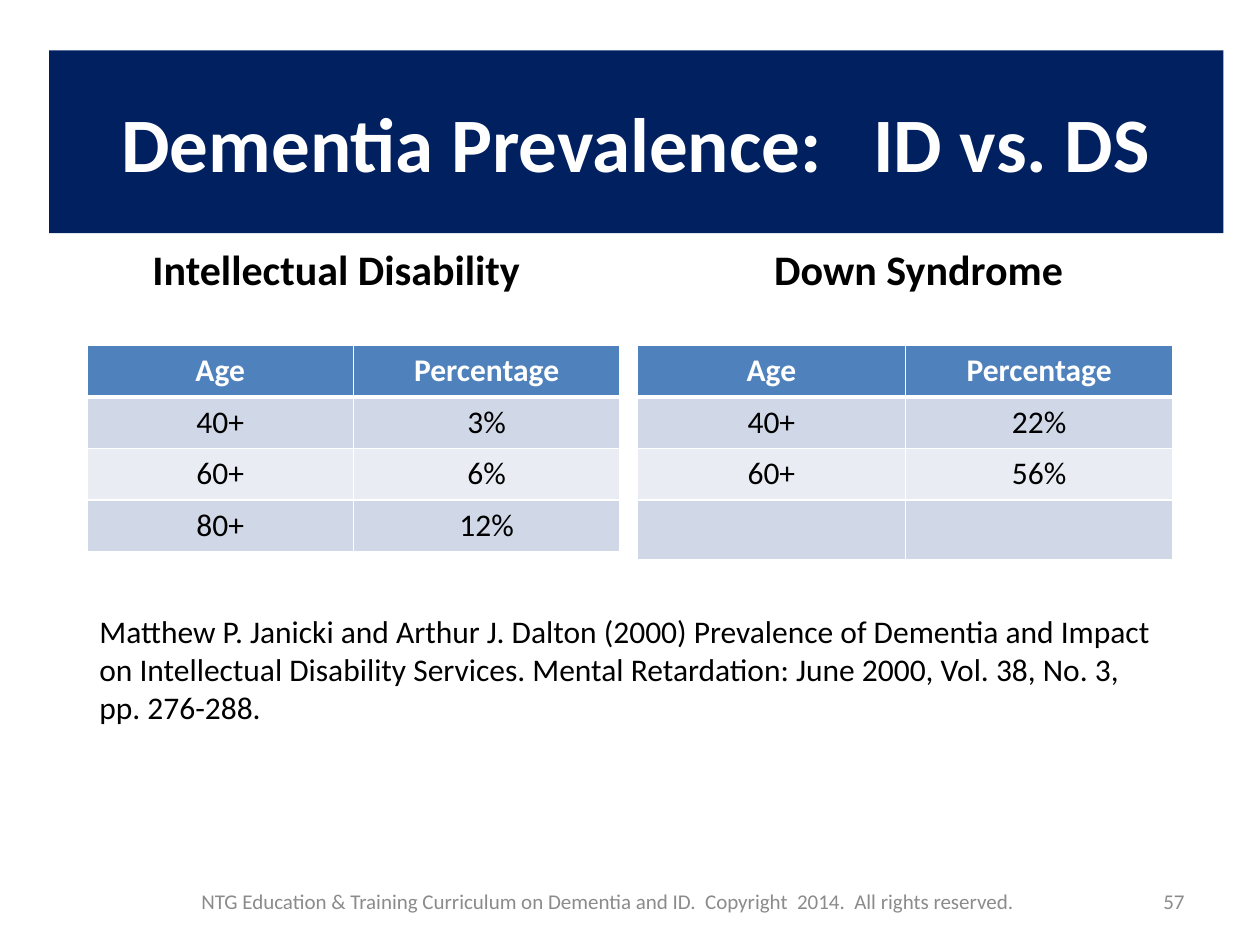
from lxml import etree
from pptx import Presentation, util as u
from pptx.dml.color import RGBColor
from pptx.enum import text
from pptx.oxml.ns import qn

COLORS = {"navy": "002060", "white": "FFFFFF", "black": "000000", "grey": "8B8B8B",
          "header": "4F81BD", "band_dark": "D0D8E7", "band_light": "E9ECF3"}
FONT = "Calibri"
TITLE = "Dementia Prevalence:   ID vs. DS"
HEADER = ("Age", "Percentage")
GROUPS = [
    {"heading": "Intellectual Disability\t", "placeholder": 1, "heading_left": 0.5,
     "table_left": 0.69, "column": 2.115, "last_row": 0.41,
     "rows": [HEADER, ("40+", "3%"), ("60+", "6%"), ("80+", "12%")]},
    {"heading": "Down Syndrome", "placeholder": 3, "heading_left": 5.08,
     "table_left": 5.06, "column": 2.125, "last_row": 0.47,
     "rows": [HEADER, ("40+", "22%"), ("60+", "56%"), ("", "")]},
]
CITATION = ("Matthew P. Janicki and Arthur J. Dalton (2000) Prevalence of Dementia and Impact "
            "on Intellectual Disability Services. Mental Retardation: June 2000, Vol. 38, "
            "No. 3, pp. 276-288.")
FOOTER = ("NTG Education & Training Curriculum on Dementia and ID.  "
          "Copyright  2014.  All rights reserved.")
PAGE_NUMBER = "57"
ROW_HEIGHT, TABLE_TOP = 0.41, 2.74
THIN, THICK = 0.96, 3
LEFT, CENTER, RIGHT = text.PP_ALIGN.LEFT, text.PP_ALIGN.CENTER, text.PP_ALIGN.RIGHT
TOP, MIDDLE, BOTTOM = text.MSO_ANCHOR.TOP, text.MSO_ANCHOR.MIDDLE, text.MSO_ANCHOR.BOTTOM


def rgb(name):
    return RGBColor.from_string(COLORS[name])


def write(frame, words, size, color, align, bold=False):
    para = frame.paragraphs[0]
    para.alignment = align
    span = para.add_run()
    span.text = words
    span.font.name, span.font.size, span.font.bold = FONT, u.Pt(size), bold
    span.font.color.rgb = rgb(color)


def place(box, area, anchor):
    box.left, box.top, box.width, box.height = map(u.Inches, area)
    frame = box.text_frame
    frame.word_wrap = True
    frame.auto_size = text.MSO_AUTO_SIZE.NONE
    frame.vertical_anchor = anchor
    return frame


def add_text(page, area, words, size, color, align, anchor):
    box = page.shapes.add_textbox(0, 0, 0, 0)
    write(place(box, area, anchor), words, size, color, align)


def set_borders(cell, row):
    widths = {"L": THIN, "R": THIN, "T": THICK if row == 1 else THIN,
              "B": THICK if row == 0 else THIN}
    properties = cell._tc.get_or_add_tcPr()
    for side, width in widths.items():
        line = etree.SubElement(properties, qn(f"a:ln{side}"), w=str(int(u.Pt(width))))
        fill = etree.SubElement(line, qn("a:solidFill"))
        etree.SubElement(fill, qn("a:srgbClr"), val=COLORS["white"])


def add_group(page, group):
    heading = page.placeholders[group["placeholder"]]
    frame = place(heading, (group["heading_left"], 1.68, 4.42, 0.7), BOTTOM)
    write(frame, group["heading"], 24, "black", CENTER, bold=True)
    frame.paragraphs[0].space_before = u.Pt(0)

    rows = group["rows"]
    heights = [ROW_HEIGHT] * (len(rows) - 1) + [group["last_row"]]
    area = (group["table_left"], TABLE_TOP, len(HEADER) * group["column"], sum(heights))
    table = page.shapes.add_table(len(rows), len(HEADER), *map(u.Inches, area)).table
    for column in table.columns:
        column.width = u.Inches(group["column"])
    for r, values in enumerate(rows):
        table.rows[r].height = u.Inches(heights[r])
        fill = "header" if r == 0 else "band_dark" if r % 2 else "band_light"
        for c, value in enumerate(values):
            cell = table.cell(r, c)
            set_borders(cell, r)
            cell.fill.solid()
            cell.fill.fore_color.rgb = rgb(fill)
            if value:
                write(cell.text_frame, value, 18, "black" if r else "white", CENTER, bold=r == 0)


def main():
    deck = Presentation()
    deck.slide_width, deck.slide_height = u.Inches(10), u.Inches(7.5)
    page = deck.slides.add_slide(deck.slide_layouts.get_by_name("Comparison"))

    title = page.shapes.title
    write(place(title, (0.39, 0.4, 9.32, 1.45), MIDDLE), TITLE, 44, "white", CENTER, bold=True)
    title.fill.solid()
    title.fill.fore_color.rgb = rgb("navy")

    for group in GROUPS:
        add_group(page, group)
    add_text(page, (0.83, 6.95, 7.99, 0.4), FOOTER, 12, "grey", CENTER, MIDDLE)
    add_text(page, (0.69, 4.81, 8.62, 1), CITATION, 18, "black", LEFT, TOP)
    add_text(page, (7.17, 6.95, 2.33, 0.4), PAGE_NUMBER, 12, "grey", RIGHT, MIDDLE)

    for box in list(page.placeholders):
        if not box.text_frame.text:
            box.element.getparent().remove(box.element)
    deck.save("out.pptx")


if __name__ == "__main__":
    main()
